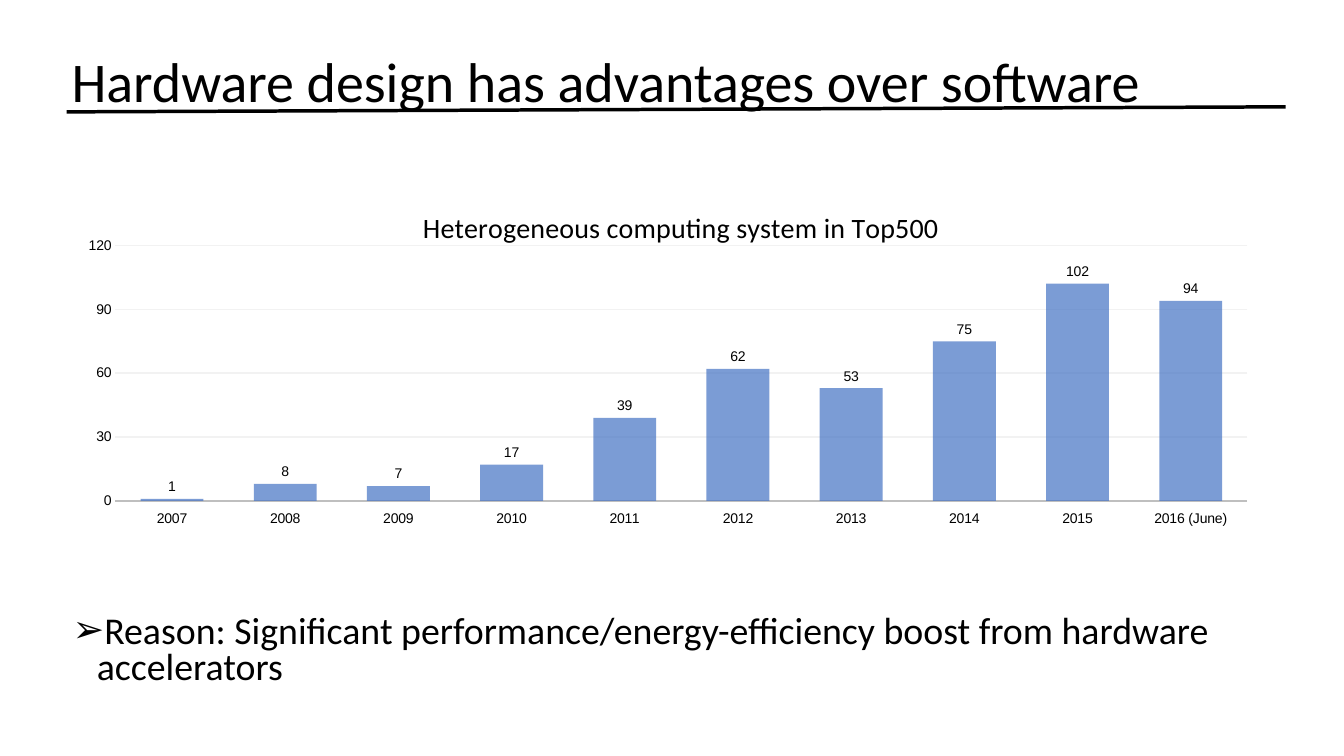
from lxml import etree
from pptx import Presentation
from pptx.chart.data import CategoryChartData
from pptx.dml.color import RGBColor
from pptx.enum.chart import (XL_CHART_TYPE, XL_LABEL_POSITION, XL_TICK_LABEL_POSITION,
                             XL_TICK_MARK)
from pptx.enum.shapes import MSO_CONNECTOR
from pptx.enum.text import MSO_ANCHOR
from pptx.oxml.ns import qn
from pptx.util import Pt

PX = 9144  # 100 px to the inch
COLUMNS = XL_CHART_TYPE.COLUMN_CLUSTERED
OUTSIDE_END = XL_LABEL_POSITION.OUTSIDE_END
LOW = XL_TICK_LABEL_POSITION.LOW
NO_TICK = XL_TICK_MARK.NONE
STRAIGHT = MSO_CONNECTOR.STRAIGHT
TOP, MIDDLE = MSO_ANCHOR.TOP, MSO_ANCHOR.MIDDLE

YEARS = [str(year) for year in range(2007, 2016)] + ["2016 (June)"]
SYSTEMS = [1, 8, 7, 17, 39, 62, 53, 75, 102, 94]


def color(hex_text):
    return RGBColor.from_string(hex_text)


def add_xml(parent, tag, **attributes):
    return etree.SubElement(parent, qn(tag), attributes)


def set_layout(parent, **values):
    """Give a chart part a manual layout, in fractions of the chart."""
    for old in parent.findall(qn("c:layout")):
        parent.remove(old)
    layout = etree.Element(qn("c:layout"))
    parent.insert(len(parent.findall(qn("c:tx"))), layout)
    manual = add_xml(layout, "c:manualLayout")
    for name, value in values.items():
        add_xml(manual, f"c:{name}", val=str(value))


class SlideBuilder:
    text_font = "Calibri"
    chart_font = "Arial"
    ink = "000000"

    def __init__(self, page):
        self.page = page

    def style(self, font, size, name):
        font.name, font.size = name, Pt(size)
        font.bold = False
        font.color.rgb = color(self.ink)

    def text(self, left, top, width, height, words, size, spacing, anchor=TOP):
        box = self.page.shapes.add_textbox(left * PX, top * PX, width * PX, height * PX)
        frame = box.text_frame
        frame.word_wrap = True
        frame.vertical_anchor = anchor
        frame.margin_left = frame.margin_right = 5 * PX
        frame.margin_top = frame.margin_bottom = 5 * PX
        para = frame.paragraphs[0]
        para.text = words
        para.line_spacing = spacing
        self.style(para.font, size, self.text_font)
        return para

    def bullet(self, para, mark, indent, space_before):
        para.space_before = Pt(space_before)
        properties = para._p.get_or_add_pPr()
        properties.set("marL", str(indent * PX))
        properties.set("indent", str(-indent * PX))
        add_xml(properties, "a:buFont", typeface=self.chart_font)
        add_xml(properties, "a:buChar", char=mark)

    def line(self, x1, y1, x2, y2, width):
        rule = self.page.shapes.add_connector(STRAIGHT, x1 * PX, y1 * PX, x2 * PX, y2 * PX)
        rule.line.color.rgb = color(self.ink)
        rule.line.width = Pt(width)
        add_xml(rule._element.spPr, "a:effectLst")

    def column_chart(self, left, top, width, height, title, categories, values):
        data = CategoryChartData(number_format="0")
        data.categories = categories
        data.add_series("Series 1", values)
        chart = self.page.shapes.add_chart(
            COLUMNS, left * PX, top * PX, width * PX, height * PX, data).chart
        self.style(chart.font, 10, self.chart_font)
        chart.has_legend = False
        self.chart_title(chart, title)
        self.axes(chart)
        self.columns(chart.plots[0])
        plot_area = chart._chartSpace.chart.plotArea
        set_layout(plot_area, layoutTarget="inner", xMode="edge", yMode="edge",
                   x=0.033, y=0.148, w=0.962, h=0.773)

    def chart_title(self, chart, words):
        chart.has_title = True
        para = chart.chart_title.text_frame.paragraphs[0]
        para.text = words
        self.style(para.font, 20, self.text_font)
        title = chart._chartSpace.xpath("c:chart/c:title")[0]
        set_layout(title, xMode="edge", yMode="edge", x=0.29, y=0.02)
        title.find(qn("c:overlay")).set("val", "1")

    def axes(self, chart):
        years, counts = chart.category_axis, chart.value_axis
        for axis in (years, counts):
            axis.major_tick_mark = axis.minor_tick_mark = NO_TICK
            self.style(axis.tick_labels.font, 10, self.chart_font)
        years.tick_label_position = LOW
        years.format.line.color.rgb = color("BFBFBF")
        years.format.line.width = Pt(1.25)
        counts.minimum_scale, counts.maximum_scale, counts.major_unit = 0, 120, 30
        counts.tick_labels.number_format = "0"
        counts.tick_labels.number_format_is_linked = False
        counts.format.line.fill.background()
        counts.major_gridlines.format.line.color.rgb = color("F2F2F2")
        counts.major_gridlines.format.line.width = Pt(1)

    def columns(self, plot):
        plot.gap_width = 80
        plot.vary_by_categories = False
        series = plot.series[0]
        series.format.fill.solid()
        series.format.fill.fore_color.rgb = color("4472C4")
        fill = series._element.xpath("c:spPr/a:solidFill/a:srgbClr")[0]
        add_xml(fill, "a:alpha", val="70000")
        series.format.line.fill.background()
        labels = series.data_labels
        labels.show_value = True
        labels.position = OUTSIDE_END
        labels.number_format = "0"
        labels.number_format_is_linked = False
        self.style(labels.font, 10, self.chart_font)


def main():
    deck = Presentation()
    deck.slide_width, deck.slide_height = 1333 * PX, 750 * PX
    slide = SlideBuilder(deck.slides.add_slide(deck.slide_layouts[6]))
    slide.text(66, 11, 1150, 145, "Hardware design has advantages over software",
               size=40, spacing=0.9, anchor=MIDDLE)
    reason = slide.text(
        67, 605, 1201, 89,
        "Reason: Significant performance/energy-efficiency boost from hardware accelerators",
        size=27, spacing=0.81)
    slide.bullet(reason, "➢", indent=24, space_before=9)
    slide.column_chart(76, 195, 1167, 328, "Heterogeneous computing system in Top500",
                       YEARS, SYSTEMS)
    slide.line(66, 111, 1275, 106, width=2.5)
    deck.save("out.pptx")


if __name__ == "__main__":
    main()
